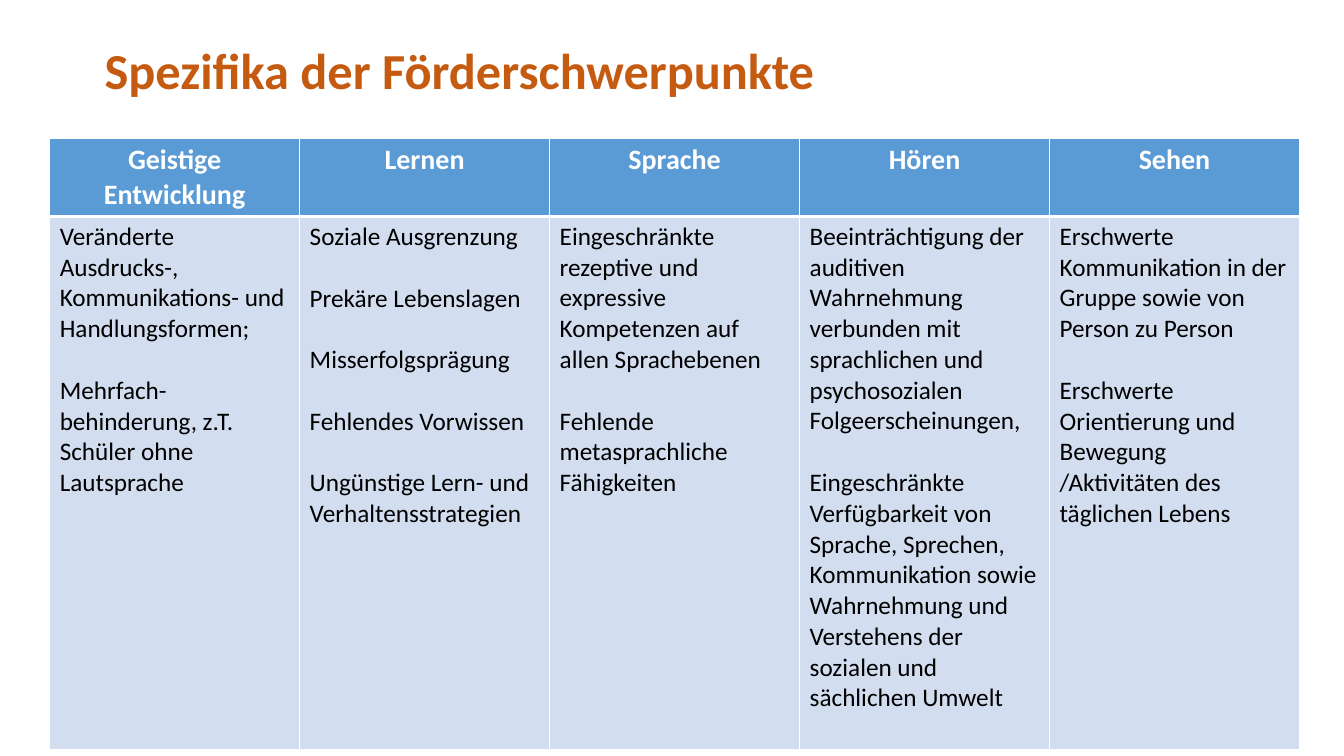
"""Build the slide on the specifics of the special educational focus areas."""
from dataclasses import dataclass
from typing import Any

from lxml.etree import SubElement
from pptx import Presentation
from pptx.dml.color import RGBColor
from pptx.enum.text import MSO_ANCHOR as Anchor, PP_ALIGN as Align
from pptx.oxml.ns import qn
from pptx.util import Pt

ORANGE = RGBColor(0xC5, 0x5A, 0x11)
BLUE = RGBColor(0x5B, 0x9B, 0xD5)
PALE_BLUE = RGBColor(0xD2, 0xDE, 0xEF)
WHITE = RGBColor(0xFF, 0xFF, 0xFF)
BLACK = RGBColor(0x00, 0x00, 0x00)

COLUMN_WIDTH = Pt(178.56)
ROW_HEIGHTS = (Pt(56), Pt(381))
PARAGRAPH_GAP = Pt(22)

TITLE_FORMAT = {"name": "Calibri", "size": Pt(36), "bold": True}
HEADER_FORMAT = {"name": "Calibri", "size": Pt(20), "bold": True}
BODY_FORMAT = {"name": "Calibri", "size": Pt(18), "bold": False}


@dataclass(frozen=True)
class FocusArea:
    name: str
    features: tuple[str, ...]


FOCUS_AREAS = (
    FocusArea("Geistige Entwicklung", (
        "Veränderte Ausdrucks-, Kommunikations- und Handlungsformen;",
        "Mehrfach-behinderung, z.T. Schüler ohne Lautsprache",
    )),
    FocusArea("Lernen", (
        "Soziale Ausgrenzung",
        "Prekäre Lebenslagen",
        "Misserfolgsprägung",
        "Fehlendes Vorwissen",
        "Ungünstige Lern- und Verhaltensstrategien",
    )),
    FocusArea("Sprache", (
        "Eingeschränkte rezeptive und expressive Kompetenzen auf allen Sprachebenen",
        "Fehlende metasprachliche Fähigkeiten",
    )),
    FocusArea("Hören", (
        "Beeinträchtigung der auditiven Wahrnehmung verbunden mit sprachlichen "
        "und psychosozialen Folgeerscheinungen,",
        "Eingeschränkte Verfügbarkeit von Sprache, Sprechen, Kommunikation sowie "
        "Wahrnehmung und Verstehens der sozialen und sächlichen Umwelt",
    )),
    FocusArea("Sehen", (
        "Erschwerte Kommunikation in der Gruppe sowie von Person zu Person",
        "Erschwerte Orientierung und Bewegung /Aktivitäten des täglichen Lebens",
    )),
)


def write_span(para: Any, text: str, style: dict[str, Any], color: RGBColor) -> None:
    span = para.add_run()
    span.text = text
    for attribute, value in style.items():
        setattr(span.font, attribute, value)
    span.font.color.rgb = color


def draw_borders(cell: Any, widths: dict[str, int]) -> None:
    properties = cell._tc.get_or_add_tcPr()
    for side, width in widths.items():
        line = SubElement(properties, qn(f"a:ln{side}"), w=str(width))
        fill = SubElement(line, qn("a:solidFill"))
        SubElement(fill, qn("a:srgbClr"), val=str(WHITE))


def paint_cell(cell: Any, color: RGBColor, top: int, bottom: int) -> None:
    draw_borders(cell, {"L": Pt(1), "R": Pt(1), "T": top, "B": bottom})
    cell.fill.solid()
    cell.fill.fore_color.rgb = color


def add_title(page: Any) -> None:
    box = page.shapes.add_textbox(Pt(67.7), Pt(0), Pt(828), Pt(104.4))
    box.text_frame.word_wrap = True
    box.text_frame.vertical_anchor = Anchor.MIDDLE
    para = box.text_frame.paragraphs[0]
    para.line_spacing = 0.9
    write_span(para, "Spezifika der Förderschwerpunkte", TITLE_FORMAT, ORANGE)


def fill_column(table: Any, index: int, area: FocusArea) -> None:
    table.columns[index].width = COLUMN_WIDTH
    header, body = table.cell(0, index), table.cell(1, index)
    paint_cell(header, BLUE, Pt(1), Pt(3))
    paint_cell(body, PALE_BLUE, Pt(3), Pt(1))
    heading = header.text_frame.paragraphs[0]
    heading.alignment = Align.CENTER
    write_span(heading, area.name, HEADER_FORMAT, WHITE)
    for position, feature in enumerate(area.features):
        frame = body.text_frame
        para = frame.add_paragraph() if position else frame.paragraphs[0]
        para.space_before = PARAGRAPH_GAP if position else Pt(0)
        write_span(para, feature, BODY_FORMAT, BLACK)


def add_focus_table(page: Any) -> None:
    count = len(FOCUS_AREAS)
    table = page.shapes.add_table(
        len(ROW_HEIGHTS), count, Pt(35.5), Pt(98.6),
        COLUMN_WIDTH * count, sum(ROW_HEIGHTS),
    ).table
    for row, height in zip(table.rows, ROW_HEIGHTS):
        row.height = height
    for index, area in enumerate(FOCUS_AREAS):
        fill_column(table, index, area)


def main() -> None:
    deck = Presentation()
    deck.slide_width, deck.slide_height = Pt(960), Pt(540)
    page = deck.slides.add_slide(deck.slide_layouts[6])
    add_title(page)
    add_focus_table(page)
    deck.save("out.pptx")


if __name__ == "__main__":
    main()
